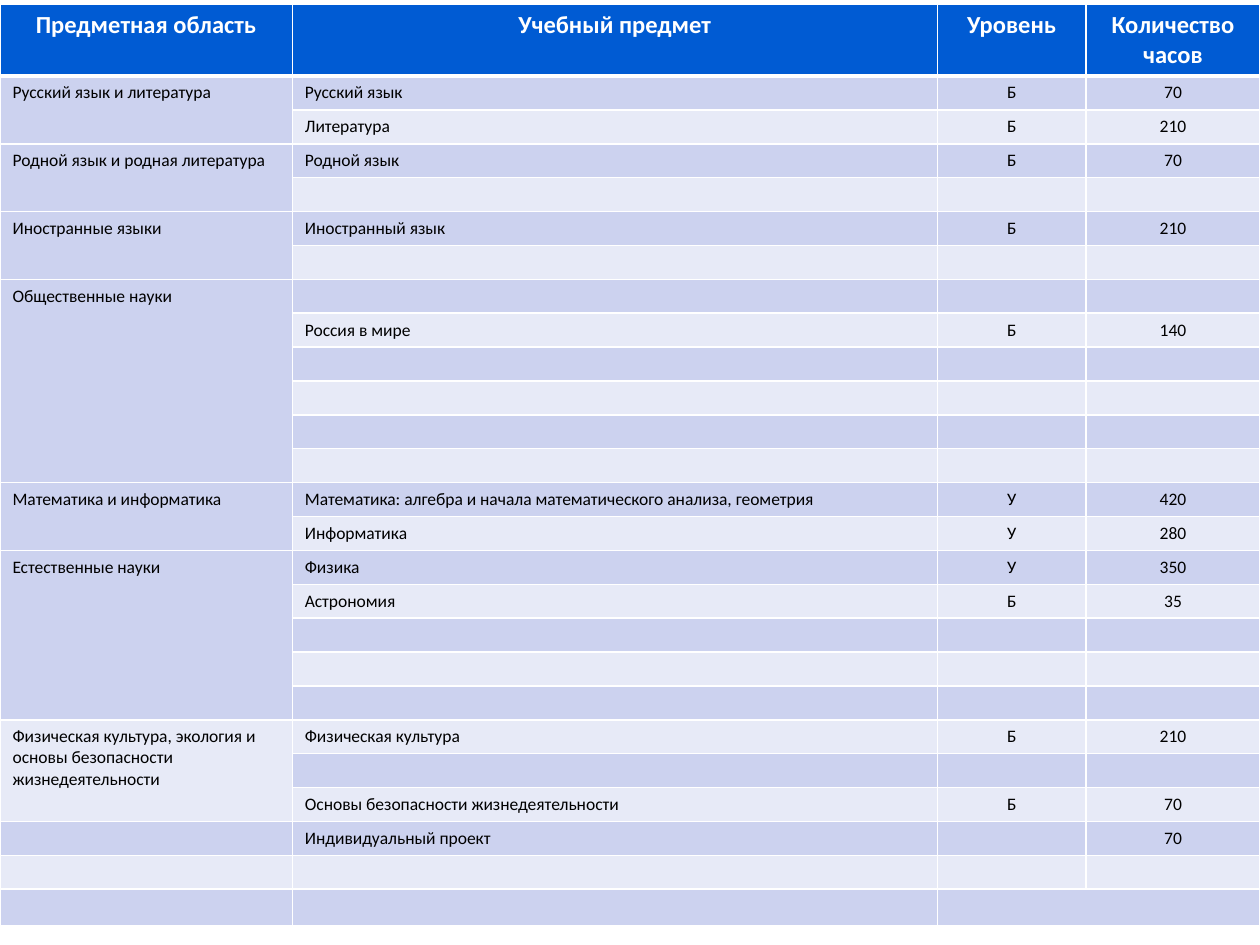
from dataclasses import dataclass

from lxml import etree
from pptx import Presentation
from pptx import util as u
from pptx.dml.color import RGBColor
from pptx.enum import text
from pptx.oxml import ns


@dataclass(frozen=True)
class Theme:
    font: str = "Calibri"
    header_size: int = 14
    body_size: int = 10
    header: str = "005BD3"
    bands: tuple = ("CCD2EF", "E7EAF7")
    white: str = "FFFFFF"
    black: str = "000000"


theme = Theme()

HEADERS = ["Предметная область", "Учебный предмет", "Уровень", "Количество часов"]
EMPTY = ("", "", "")
# Each subject area with its rows of subject, level and hours
AREAS = [
    ("Русский язык и литература",
     [("Русский язык", "Б", "70"), ("Литература", "Б", "210")]),
    ("Родной язык и родная литература", [("Родной язык", "Б", "70"), EMPTY]),
    ("Иностранные языки", [("Иностранный язык", "Б", "210"), EMPTY]),
    ("Общественные науки", [EMPTY, ("Россия в мире", "Б", "140")] + [EMPTY] * 4),
    ("Математика и информатика",
     [("Математика: алгебра и начала математического анализа, геометрия", "У", "420"),
      ("Информатика", "У", "280")]),
    ("Естественные науки",
     [("Физика", "У", "350"), ("Астрономия", "Б", "35")] + [EMPTY] * 3),
    ("Физическая культура, экология и основы безопасности жизнедеятельности",
     [("Физическая культура", "Б", "210"), EMPTY,
      ("Основы безопасности жизнедеятельности", "Б", "70")]),
    ("", [("Индивидуальный проект", "", "70")]),
    ("", [EMPTY]),
    ("", [EMPTY]),
]
COL_WIDTHS = [2.32, 5.12, 1.18, 1.38]
TABLE_HEIGHT, HEADER_HEIGHT, LAST_HEIGHT = 7.29, 0.54, 0.29


def add_borders(cell, top, bottom):
    """Draw white cell borders; top and bottom widths are in points."""
    tc_pr = cell._tc.get_or_add_tcPr()
    for side, width in (("L", 1), ("R", 1), ("T", top), ("B", bottom)):
        ln = etree.SubElement(tc_pr, ns.qn(f"a:ln{side}"), w=str(u.Pt(width)))
        fill = etree.SubElement(ln, ns.qn("a:solidFill"))
        etree.SubElement(fill, ns.qn("a:srgbClr"), val=theme.white)


prs = Presentation()
prs.slide_width, prs.slide_height = u.Inches(10), u.Inches(7.5)
s = prs.slides.add_slide(prs.slide_layouts[6])

rows = [HEADERS]
merges = []
for area, subjects in AREAS:
    start = len(rows)
    rows += [[area if i == 0 else "", *subject] for i, subject in enumerate(subjects)]
    if len(subjects) > 1:
        merges.append(((start, 0), (len(rows) - 1, 0)))
last = len(rows) - 1
merges.append(((last, 2), (last, 3)))

table = s.shapes.add_table(len(rows), len(HEADERS), u.Inches(0), u.Inches(0.03),
                           u.Inches(10), u.Inches(TABLE_HEIGHT)).table
for column, width in zip(table.columns, COL_WIDTHS):
    column.width = u.Inches(width)
body_height = (TABLE_HEIGHT - HEADER_HEIGHT - LAST_HEIGHT) / (last - 1)
for row in table.rows:
    row.height = u.Inches(body_height)
table.rows[0].height = u.Inches(HEADER_HEIGHT)
table.rows[last].height = u.Inches(LAST_HEIGHT)

for i, values in enumerate(rows):
    is_header = i == 0
    size = theme.header_size if is_header else theme.body_size
    for j, value in enumerate(values):
        cell = table.cell(i, j)
        add_borders(cell, top=3 if i == 1 else 1, bottom=3 if is_header else 1)
        cell.fill.solid()
        cell.fill.fore_color.rgb = RGBColor.from_string(
            theme.header if is_header else theme.bands[(i - 1) % 2])
        p = cell.text_frame.paragraphs[0]
        if is_header or j >= 2:
            p.alignment = text.PP_ALIGN.CENTER
        if value:
            p.text = value
            font = p.runs[0].font
            font.name, font.size, font.bold = theme.font, u.Pt(size), is_header
            font.color.rgb = RGBColor.from_string(theme.white if is_header else theme.black)
        else:
            # Keeps an empty row as low as the rows with text
            etree.SubElement(p._p, ns.qn("a:endParaRPr"), sz=str(size * 100))

for first, final in merges:
    table.cell(*first).merge(table.cell(*final))

prs.save("out.pptx")
